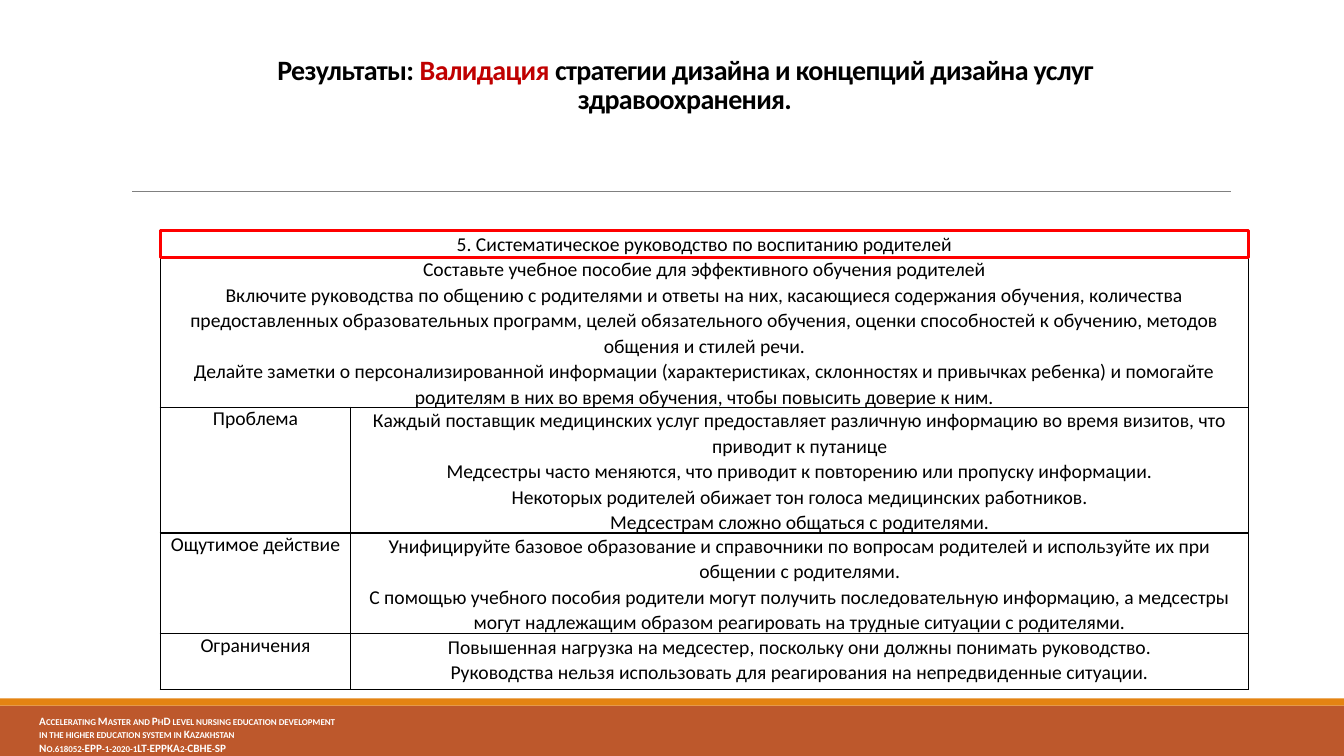
from lxml import etree
from pptx import Presentation
from pptx.dml.color import RGBColor
from pptx.enum import shapes, text
from pptx.oxml import ns
from pptx.util import Cm, Pt

FONT = "Calibri"
BLACK, WHITE, RED = "000000", "FFFFFF", "FF0000"
TABLE_LEFT, TABLE_TOP = 4.04, 5.82
COLUMN_WIDTHS = (4.8, 22.63)
ROW_HEIGHTS = (0.61, 3.1, 3.1, 2.29, 1.4)

TITLE = (
    ("Результаты: ", BLACK),
    ("Валидация", "C00000"),
    (" стратегии дизайна и концепций дизайна услуг здравоохранения.", BLACK),
)
FOOTER = (
    "Accelerating Master and PhD level nursing education development",
    "in the higher education system in Kazakhstan",
    "No.618052-EPP-1-2020-1LT-EPPKA2-CBHE-SP",
)
WIDE_ROWS = (
    ("5. Систематическое руководство по воспитанию родителей",),
    (
        "Составьте учебное пособие для эффективного обучения родителей",
        "Включите руководства по общению с родителями и ответы на них, касающиеся "
        "содержания обучения, количества предоставленных образовательных программ, "
        "целей обязательного обучения, оценки способностей к обучению, методов "
        "общения и стилей речи.",
        "Делайте заметки о персонализированной информации (характеристиках, "
        "склонностях и привычках ребенка) и помогайте родителям в них во время "
        "обучения, чтобы повысить доверие к ним.",
    ),
)
LABELLED_ROWS = (
    ("Проблема", (
        "Каждый поставщик медицинских услуг предоставляет различную информацию "
        "во время визитов, что приводит к путанице",
        "Медсестры часто меняются, что приводит к повторению или пропуску информации.",
        "Некоторых родителей обижает тон голоса медицинских работников.",
        "Медсестрам сложно общаться с родителями.",
    )),
    ("Ощутимое действие", (
        "Унифицируйте базовое образование и справочники по вопросам родителей "
        "и используйте их при общении с родителями.",
        "С помощью учебного пособия родители могут получить последовательную "
        "информацию, а медсестры могут надлежащим образом реагировать на трудные "
        "ситуации с родителями.",
    )),
    ("Ограничения", (
        "Повышенная нагрузка на медсестер, поскольку они должны понимать руководство.",
        "Руководства нельзя использовать для реагирования на непредвиденные ситуации.",
    )),
)


def colour(value):
    return RGBColor.from_string(value)


def style(span, size, fill, bold=False):
    span.font.name = FONT
    span.font.size = Pt(size)
    span.font.bold = bold
    span.font.color.rgb = colour(fill)


def set_run_attribute(span, name, value):
    span._r.get_or_add_rPr().set(name, value)


def add_rectangle(page, left, top, width, height, fill=None, line=None):
    box = page.shapes.add_shape(
        shapes.MSO_SHAPE.RECTANGLE, Cm(left), Cm(top), Cm(width), Cm(height))
    box.shadow.inherit = False
    if fill:
        box.fill.solid()
        box.fill.fore_color.rgb = colour(fill)
    else:
        box.fill.background()
    if line:
        box.line.color.rgb = colour(line)
        box.line.width = Pt(2.25)
    else:
        box.line.fill.background()


def add_rule(page, left, right, top):
    rule = page.shapes.add_connector(
        shapes.MSO_CONNECTOR.STRAIGHT, Cm(left), Cm(top), Cm(right), Cm(top))
    rule.line.color.rgb = colour("808080")
    rule.line.width = Pt(0.5)
    etree.SubElement(rule._element.spPr, ns.qn("a:effectLst"))


def add_footer(page):
    box = page.shapes.add_textbox(Cm(0.74), Cm(17.87), Cm(11.66), Cm(1.18))
    frame = box.text_frame
    frame.word_wrap = True
    frame.text = "\n".join(FOOTER)
    for para in frame.paragraphs:
        for span in para.runs:
            style(span, 8, WHITE, bold=True)
            set_run_attribute(span, "cap", "small")


def fill_title(page):
    title = page.shapes.title
    title.left, title.top, title.width, title.height = (
        Cm(4.75), Cm(0.2), Cm(25.02), Cm(2.82))
    frame = title.text_frame
    frame.auto_size = text.MSO_AUTO_SIZE.NONE
    frame.word_wrap = True
    frame.vertical_anchor = text.MSO_ANCHOR.BOTTOM
    para = frame.paragraphs[0]
    para.alignment = text.PP_ALIGN.CENTER
    para.line_spacing = 0.85
    for words, fill in TITLE:
        span = para.add_run()
        span.text = words
        style(span, 20, fill, bold=True)
        set_run_attribute(span, "spc", "-50")


def add_borders(cell):
    properties = cell._tc.get_or_add_tcPr()
    for index, side in enumerate(("lnL", "lnR", "lnT", "lnB")):
        border = etree.Element(ns.qn("a:" + side), w=str(Pt(1)))
        solid = etree.SubElement(border, ns.qn("a:solidFill"))
        etree.SubElement(solid, ns.qn("a:srgbClr"), val=BLACK)
        properties.insert(index, border)


def fill_cell(cell, lines, spacing=1.07):
    cell.margin_left = cell.margin_right = Cm(0.13)
    cell.margin_top = cell.margin_bottom = 0
    cell.text_frame.text = "\n".join(lines)
    for para in cell.text_frame.paragraphs:
        para.alignment = text.PP_ALIGN.CENTER
        para.line_spacing = spacing
        for span in para.runs:
            style(span, 14, BLACK)


def add_guide_table(page):
    frame = page.shapes.add_table(
        len(ROW_HEIGHTS), len(COLUMN_WIDTHS), Cm(TABLE_LEFT), Cm(TABLE_TOP),
        Cm(sum(COLUMN_WIDTHS)), Cm(sum(ROW_HEIGHTS)))
    table = frame.table
    table.first_row = table.horz_banding = False
    for column, width in zip(table.columns, COLUMN_WIDTHS):
        column.width = Cm(width)
    for row, height in zip(table.rows, ROW_HEIGHTS):
        row.height = Cm(height)
    for cell in table.iter_cells():
        cell.fill.solid()
        cell.fill.fore_color.rgb = colour(WHITE)
        add_borders(cell)
    for index, lines in enumerate(WIDE_ROWS):
        table.cell(index, 0).merge(table.cell(index, 1))
        fill_cell(table.cell(index, 0), lines)
    for index, (label, lines) in enumerate(LABELLED_ROWS, len(WIDE_ROWS)):
        fill_cell(table.cell(index, 0), [label], spacing=1.0)
        fill_cell(table.cell(index, 1), lines)


def main():
    deck = Presentation()
    deck.slide_width, deck.slide_height = Cm(33.87), Cm(19.05)
    page = deck.slides.add_slide(deck.slide_layouts.get_by_name("Title Only"))
    add_rectangle(page, 0, 17.78, 33.87, 1.27, fill="BD582C")
    add_rectangle(page, 0, 17.6, 33.87, 0.18, fill="E48312")
    add_rule(page, 3.33, 31.01, 4.83)
    add_footer(page)
    fill_title(page)
    add_guide_table(page)
    add_rectangle(page, TABLE_LEFT, TABLE_TOP, sum(COLUMN_WIDTHS), 0.66, line=RED)
    deck.save("out.pptx")


if __name__ == "__main__":
    main()
